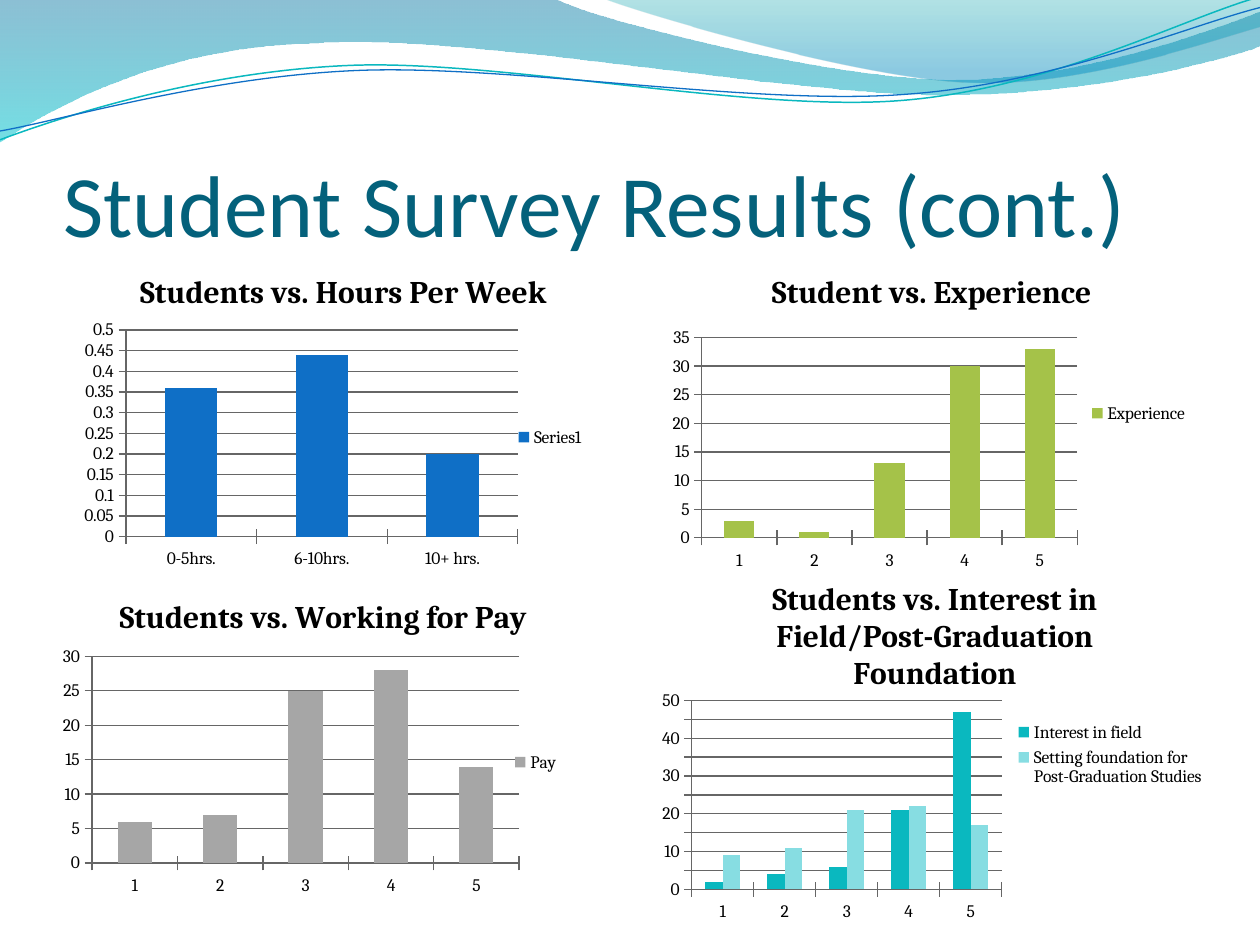
from lxml import etree
from pptx import Presentation
from pptx.chart.data import CategoryChartData
from pptx.dml.color import RGBColor
from pptx.enum.chart import XL_CHART_TYPE, XL_LEGEND_POSITION as LegendPosition, XL_TICK_MARK as TickMark
from pptx.enum.text import MSO_ANCHOR
from pptx.oxml.ns import qn
from pptx.util import Inches, Pt

BLACK = RGBColor(0x00, 0x00, 0x00)
GRID = RGBColor(0x66, 0x66, 0x66)
TITLE = RGBColor(0x04, 0x61, 0x7B)
BLUE = RGBColor(0x0F, 0x6F, 0xC6)
TEAL = RGBColor(0x0A, 0xB8, 0xBF)
AQUA = RGBColor(0x87, 0xDD, 0xE2)
GREEN = RGBColor(0xA5, 0xC2, 0x49)
GRAY = RGBColor(0xA6, 0xA6, 0xA6)
WAVE_TOP = RGBColor(0x00, 0x74, 0xA1)
WAVE_BOTTOM = RGBColor(0x00, 0xC6, 0xCF)
CREST_TOP = RGBColor(0x00, 0xA1, 0xA9)
CREST_BOTTOM = RGBColor(0x00, 0x8B, 0xBF)

UNITS_PER_INCH = 100
RATINGS = ["1", "2", "3", "4", "5"]

# Each segment holds one end point (line) or two controls and an end point (curve).
WAVE = [(0, 0), (4.4, -0.01),
        (4.76, 0.17, 6.64, 0.63, 7.58, 0.63), (8.53, 0.63, 9.58, 0.26, 10, 0.09),
        (10.01, 0.36),
        (9.83, 0.44, 8.7, 0.76, 7.46, 0.75), (6.22, 0.75, 3.82, 0.28, 2.57, 0.34),
        (1.29, 0.36, 0.46, 0.83, -0.01, 1.13), (0, 0)]
CREST = [(4.79, -0.01), (5.09, 0.11, 6.82, 0.62, 7.69, 0.65),
         (8.56, 0.69, 9.61, 0.32, 10, 0.21), (10, 0), (4.79, -0.01)]
TEAL_LINE = [(0, 1.11), (0.48, 0.93, 1.58, 0.57, 2.77, 0.52),
             (3.95, 0.47, 5.93, 0.89, 7.13, 0.8), (8.33, 0.71, 9.38, 0.15, 9.98, -0.02)]
BLUE_LINE = [(0, 1.04), (0.47, 0.96, 1.64, 0.61, 2.83, 0.56),
             (4.03, 0.51, 5.97, 0.84, 7.17, 0.75), (8.36, 0.67, 9.41, 0.21, 10, 0.06)]


def add_outline(slide, segments, close):
    """Add a freeform, then join each control-control-end triple into a curve."""
    points = [tuple(round(value * UNITS_PER_INCH) for value in segment[i:i + 2])
              for segment in segments for i in range(0, len(segment), 2)]
    builder = slide.shapes.build_freeform(*points[0], scale=Inches(1) / UNITS_PER_INCH)
    builder.add_line_segments(points[1:], close=close)
    shape = builder.convert_to_shape()
    shape.shadow.inherit = False
    steps = iter(list(shape._element.spPr.iter(qn("a:lnTo"))))
    for segment in segments[1:]:
        nodes = [next(steps) for _ in range(len(segment) // 2)]
        if len(nodes) == 3:
            curve = etree.Element(qn("a:cubicBezTo"))
            nodes[0].addprevious(curve)
            for node in nodes:
                curve.append(node[0])
                node.getparent().remove(node)
    return shape


def add_wave(slide, segments, stops):
    """Add a filled wave; stops are (position, colour, opacity percent)."""
    shape = add_outline(slide, segments, True)
    shape.line.fill.background()
    shape.fill.gradient()
    shape.fill.gradient_angle = 270
    for stop, (position, color, _) in zip(shape.fill.gradient_stops, stops):
        stop.position = position
        stop.color.rgb = color
    for node, (_, _, opacity) in zip(shape._element.spPr.iter(qn("a:srgbClr")), stops):
        etree.SubElement(node, qn("a:alpha"), val=str(opacity * 1000))


def add_wave_line(slide, segments, color, width):
    shape = add_outline(slide, segments, False)
    shape.fill.background()
    shape.line.color.rgb = color
    shape.line.width = Pt(width)


def add_title(slide, text):
    box = slide.shapes.add_textbox(Inches(0.5), Inches(0.77), Inches(9.08), Inches(1.25))
    frame = box.text_frame
    frame.word_wrap = True
    frame.vertical_anchor = MSO_ANCHOR.BOTTOM
    frame.margin_left = frame.margin_right = frame.margin_bottom = 0
    frame.text = text
    font = frame.paragraphs[0].runs[0].font
    font.name, font.size, font.color.rgb = "Calibri", Pt(50), TITLE


def make_layout(area, chart_box, inner=False):
    """Express an area of the slide as fractions of its chart."""
    layout = etree.Element(qn("c:layout"))
    manual = etree.SubElement(layout, qn("c:manualLayout"))
    if inner:
        etree.SubElement(manual, qn("c:layoutTarget"), val="inner")
    for name in ("xMode", "yMode"):
        etree.SubElement(manual, qn("c:" + name), val="edge")
    left, top, width, height = chart_box
    fractions = ((area[0] - left) / width, (area[1] - top) / height,
                 area[2] / width, area[3] / height)
    for name, value in zip("xywh", fractions):
        etree.SubElement(manual, qn("c:" + name), val=f"{value:.4f}")
    return layout


def remove_children(parent, tag):
    for child in parent.findall(qn(tag)):
        parent.remove(child)


def style_axis(axis):
    axis.major_tick_mark = TickMark.CROSS
    axis.minor_tick_mark = TickMark.NONE
    axis.format.line.color.rgb = GRID


def add_column_chart(slide, title, box, plot_area, legend_area, top, unit, categories, series):
    """Add a chart; series are (name, values, colour), an empty name is automatic."""
    data = CategoryChartData()
    data.categories = categories
    for name, values, _ in series:
        data.add_series(name, values)
    chart = slide.shapes.add_chart(XL_CHART_TYPE.COLUMN_CLUSTERED,
                                   *map(Inches, box), data).chart
    chart.font.name, chart.font.size = "Cambria", Pt(10)
    chart.font.color.rgb = BLACK

    chart.has_title = True
    chart.chart_title.text_frame.text = title
    font = chart.chart_title.text_frame.paragraphs[0].runs[0].font
    font.name, font.size, font.bold = "Cambria", Pt(18), True
    font.color.rgb = BLACK

    style_axis(chart.category_axis)
    axis = chart.value_axis
    style_axis(axis)
    axis.minimum_scale, axis.maximum_scale, axis.major_unit = 0, top, unit
    axis.major_gridlines.format.line.color.rgb = GRID

    plot = chart.plots[0]
    plot.gap_width, plot.overlap, plot.vary_by_categories = 150, 0, False
    for column, (name, _, color) in zip(plot.series, series):
        column.format.fill.solid()
        column.format.fill.fore_color.rgb = color
        if not name:
            remove_children(column._element, "c:tx")

    chart.has_legend = True
    chart.legend.position = LegendPosition.RIGHT
    chart.legend.include_in_layout = False
    legend = chart.legend._element
    remove_children(legend, "c:layout")
    legend.find(qn("c:legendPos")).addnext(make_layout(legend_area, box))
    plot_node = chart._chartSpace.find(".//" + qn("c:plotArea"))
    remove_children(plot_node, "c:layout")
    plot_node.insert(0, make_layout(plot_area, box, inner=True))


def main():
    presentation = Presentation()
    presentation.slide_width, presentation.slide_height = Inches(10), Inches(7.5)
    slide = presentation.slides.add_slide(presentation.slide_layouts[6])

    add_wave(slide, WAVE, [(0, WAVE_TOP, 45), (1, WAVE_BOTTOM, 55)])
    add_wave(slide, CREST, [(0, CREST_TOP, 30), (0.8, CREST_BOTTOM, 45)])
    add_wave_line(slide, TEAL_LINE, TEAL, 0.85)
    add_wave_line(slide, BLUE_LINE, BLUE, 0.75)
    add_title(slide, "Student Survey Results (cont.)")

    add_column_chart(slide, "Students vs. Hours Per Week", (0.58, 2, 4.29, 2.57),
                     (1, 2.62, 3.11, 1.64), (4.04, 3.37, 0.65, 0.2), 0.5, 0.05,
                     ["0-5hrs.", "6-10hrs.", "10+ hrs."],
                     [("", (0.36, 0.44, 0.2), BLUE)])
    add_column_chart(slide, "Students vs. Working for Pay", (0.42, 4.58, 4.29, 2.57),
                     (0.73, 5.21, 3.39, 1.64), (4, 5.95, 0.5, 0.2), 30, 5, RATINGS,
                     [("Pay", (6, 7, 25, 28, 14), GRAY)])
    add_column_chart(slide, "Student vs. Experience", (5.25, 2, 4.29, 2.57),
                     (5.57, 2.68, 2.98, 1.59), (8.6, 3.18, 0.87, 0.2), 35, 5, RATINGS,
                     [("Experience", (3, 1, 13, 30, 33), GREEN)])
    add_column_chart(slide, "Students vs. Interest in Field/Post-Graduation Foundation",
                     (5.17, 4.58, 4.5, 2.79),
                     (5.49, 5.56, 2.46, 1.5), (8.01, 5.69, 1.6, 0.6), 50, 5, RATINGS,
                     [("Interest in field", (2, 4, 6, 21, 47), TEAL),
                      ("Setting foundation for Post-Graduation Studies",
                       (9, 11, 21, 22, 17), AQUA)])
    presentation.save("out.pptx")


if __name__ == "__main__":
    main()
